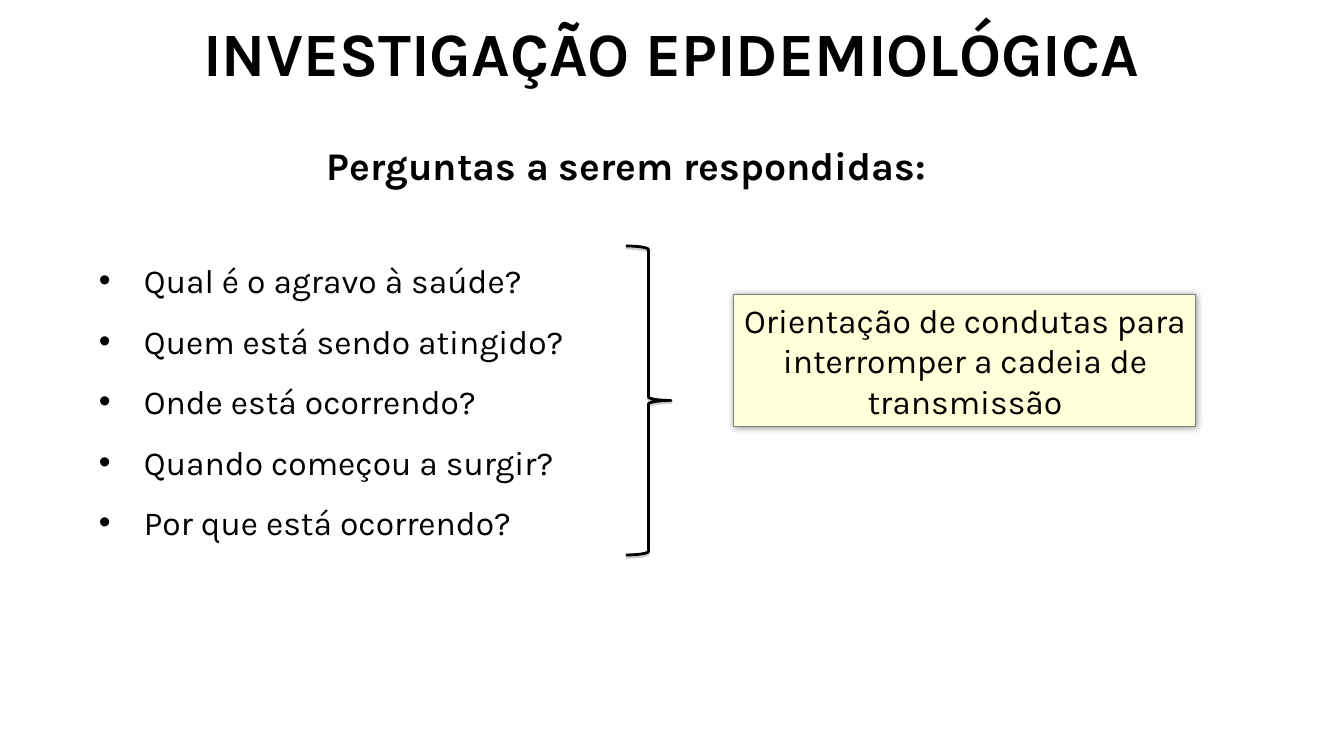
from lxml.etree import SubElement
from pptx import Presentation
from pptx.dml.color import RGBColor
from pptx.enum.shapes import MSO_SHAPE
from pptx.enum.text import MSO_ANCHOR, MSO_AUTO_SIZE, PP_ALIGN
from pptx.oxml.ns import qn
from pptx.util import Emu, Pt


def px(length):
    return Emu(round(length * 914400 / 100.8))


def color(value):
    return RGBColor.from_string(value)


class SlideBuilder:
    font_name = "Karla"
    ink = "000000"

    def __init__(self, presentation):
        self.slide = presentation.slides.add_slide(presentation.slide_layouts[5])

    def fill_text(self, shape, lines, size, bold=False, align=PP_ALIGN.LEFT,
                  anchor=MSO_ANCHOR.TOP, wrap=True):
        frame = shape.text_frame
        frame.text = "\n".join(lines)
        frame.auto_size = MSO_AUTO_SIZE.NONE
        frame.word_wrap = wrap
        frame.vertical_anchor = anchor
        for paragraph in frame.paragraphs:
            paragraph.alignment = align
            paragraph.font.name = self.font_name
            paragraph.font.size = Pt(size)
            paragraph.font.bold = bold
            paragraph.font.color.rgb = color(self.ink)
        return frame

    def title(self, text, left, top, width, height):
        shape = self.slide.shapes.title
        shape.left, shape.top = px(left), px(top)
        shape.width, shape.height = px(width), px(height)
        self.fill_text(shape, [text], 44, True, PP_ALIGN.CENTER, MSO_ANCHOR.MIDDLE, False)

    def text(self, lines, left, top, width, height, size, bold=False):
        shape = self.slide.shapes.add_textbox(px(left), px(top), px(width), px(height))
        return self.fill_text(shape, lines, size, bold)

    def bullets(self, lines, left, top, width, height, size, indent):
        frame = self.text(lines, left, top, width, height, size)
        for paragraph in frame.paragraphs:
            paragraph.line_spacing = 1.5
            properties = paragraph._p.get_or_add_pPr()
            properties.set("marL", str(px(indent)))
            properties.set("indent", str(-px(indent)))
            SubElement(properties, qn("a:buFont"), typeface="Arial")
            SubElement(properties, qn("a:buChar"), char="•")
            properties.append(properties.find(qn("a:defRPr")))

    def shape(self, kind, left, top, width, height, line, line_width, fill=None):
        shape = self.slide.shapes.add_shape(kind, px(left), px(top), px(width), px(height))
        if fill:
            shape.fill.solid()
            shape.fill.fore_color.rgb = color(fill)
        else:
            shape.fill.background()
        shape.line.color.rgb = color(line)
        shape.line.width = Pt(line_width)
        shape.shadow.inherit = False
        return shape

    def shadow(self, shape, value, opacity, blur=0, distance=0, angle=0):
        effects = shape._element.spPr.find(qn("a:effectLst"))
        outer = SubElement(effects, qn("a:outerShdw"), blurRad=str(Pt(blur)),
                           dist=str(Pt(distance)), dir=str(angle * 60000),
                           rotWithShape="0")
        tint = SubElement(outer, qn("a:srgbClr"), val=value)
        SubElement(tint, qn("a:alpha"), val=str(opacity * 1000))


def main():
    presentation = Presentation()
    presentation.slide_width, presentation.slide_height = px(1344), px(756)
    builder = SlideBuilder(presentation)

    builder.title("INVESTIGAÇÃO EPIDEMIOLÓGICA", 168, 6, 1008, 91)
    builder.text(["Perguntas a serem respondidas:"], 317, 136, 635, 57, 28, True)
    questions = [
        "Qual é o agravo à saúde?",
        "Quem está sendo atingido?",
        "Onde está ocorrendo?",
        "Quando começou a surgir?",
        "Por que está ocorrendo?",
    ]
    builder.bullets(questions, 89, 235, 561, 316, 24, 45)

    guidance = builder.shape(MSO_SHAPE.RECTANGLE, 734, 295, 462, 132, "808080", 0.75, "FFFFD9")
    builder.shadow(guidance, "000000", 40, blur=5)
    guidance_lines = ["Orientação de condutas para interromper a cadeia de", "transmissão"]
    builder.fill_text(guidance, guidance_lines, 24, align=PP_ALIGN.CENTER)

    brace = builder.shape(MSO_SHAPE.RIGHT_BRACE, 626, 246, 45, 309, "000000", 2)
    brace.adjustments[0] = 0.08
    brace.adjustments[1] = 0.5
    builder.shadow(brace, "808080", 38, distance=1.6, angle=90)

    presentation.save("out.pptx")


if __name__ == "__main__":
    main()
